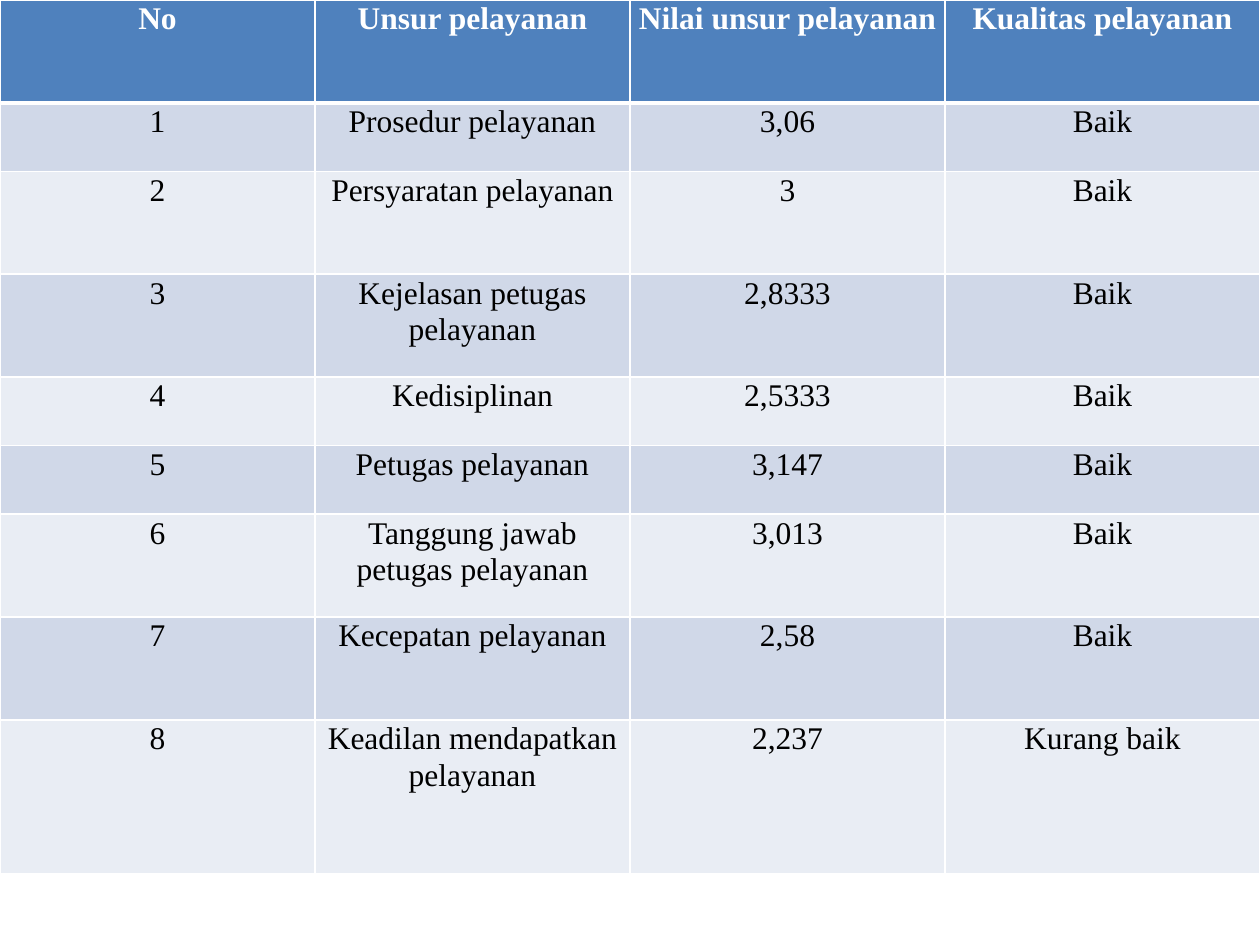
from dataclasses import dataclass

from lxml import etree
from pptx import Presentation
from pptx.dml.color import RGBColor
from pptx.enum.text import MSO_ANCHOR, PP_ALIGN
from pptx.oxml.ns import qn
from pptx.util import Inches, Pt

CENTER = PP_ALIGN.CENTER
TOP = MSO_ANCHOR.TOP
FONT = "Times New Roman"
WHITE, BLACK, BLUE = "FFFFFF", "000000", "4F81BD"
BANDS = ("D0D8E8", "E9EDF4")
TABLE_HEIGHT = 6.94
THIN, THICK = 1, 3
HEADINGS = ("No", "Unsur pelayanan", "Nilai unsur pelayanan", "Kualitas pelayanan")


@dataclass(frozen=True)
class Service:
    name: str
    score: str
    lines: float
    quality: str = "Baik"


HEADING_LINES = 3
SERVICES = (
    Service("Prosedur pelayanan", "3,06", 2),
    Service("Persyaratan pelayanan", "3", 3),
    Service("Kejelasan petugas pelayanan", "2,8333", 3),
    Service("Kedisiplinan", "2,5333", 2),
    Service("Petugas pelayanan", "3,147", 2),
    Service("Tanggung jawab petugas pelayanan", "3,013", 3),
    Service("Kecepatan pelayanan", "2,58", 3),
    Service("Keadilan mendapatkan pelayanan", "2,237", 4.5, "Kurang baik"),
)


def colour(value: str) -> RGBColor:
    return RGBColor.from_string(value)


def set_borders(cell, top: float, bottom: float) -> None:
    properties = cell._tc.get_or_add_tcPr()
    for side, width in (("L", THIN), ("R", THIN), ("T", top), ("B", bottom)):
        line = etree.SubElement(properties, qn(f"a:ln{side}"), w=str(Pt(width)))
        fill = etree.SubElement(line, qn("a:solidFill"))
        etree.SubElement(fill, qn("a:srgbClr"), val=WHITE)


def write_cell(cell, text: str, *, fill: str, ink: str = BLACK, bold: bool = False,
               top: float = THIN, bottom: float = THIN) -> None:
    set_borders(cell, top, bottom)
    cell.fill.solid()
    cell.fill.fore_color.rgb = colour(fill)
    cell.margin_left = cell.margin_right = Inches(0.07)
    cell.margin_top = cell.margin_bottom = 0
    cell.vertical_anchor = TOP
    para = cell.text_frame.paragraphs[0]
    para.alignment = CENTER
    para.line_spacing = 1.05
    span = para.add_run()
    span.text = text
    span.font.name = FONT
    span.font.size = Pt(18)
    span.font.bold = bold
    span.font.color.rgb = colour(ink)


def add_service_table(page, width: int) -> None:
    row_lines = [HEADING_LINES] + [service.lines for service in SERVICES]
    table = page.shapes.add_table(len(row_lines), len(HEADINGS), 0, 0,
                                  width, Inches(TABLE_HEIGHT)).table
    table.first_row = table.horz_banding = False
    for row, lines in zip(table.rows, row_lines):
        row.height = Inches(TABLE_HEIGHT * lines / sum(row_lines))
    for column, heading in enumerate(HEADINGS):
        write_cell(table.cell(0, column), heading, fill=BLUE, ink=WHITE,
                   bold=True, bottom=THICK)
    for number, service in enumerate(SERVICES, start=1):
        values = (str(number), service.name, service.score, service.quality)
        for column, value in enumerate(values):
            write_cell(table.cell(number, column), value,
                       fill=BANDS[(number - 1) % len(BANDS)],
                       top=THICK if number == 1 else THIN)


def main() -> None:
    deck = Presentation()
    deck.slide_width, deck.slide_height = Inches(10), Inches(7.5)
    page = deck.slides.add_slide(deck.slide_layouts[6])
    add_service_table(page, deck.slide_width)
    deck.save("out.pptx")


if __name__ == "__main__":
    main()
